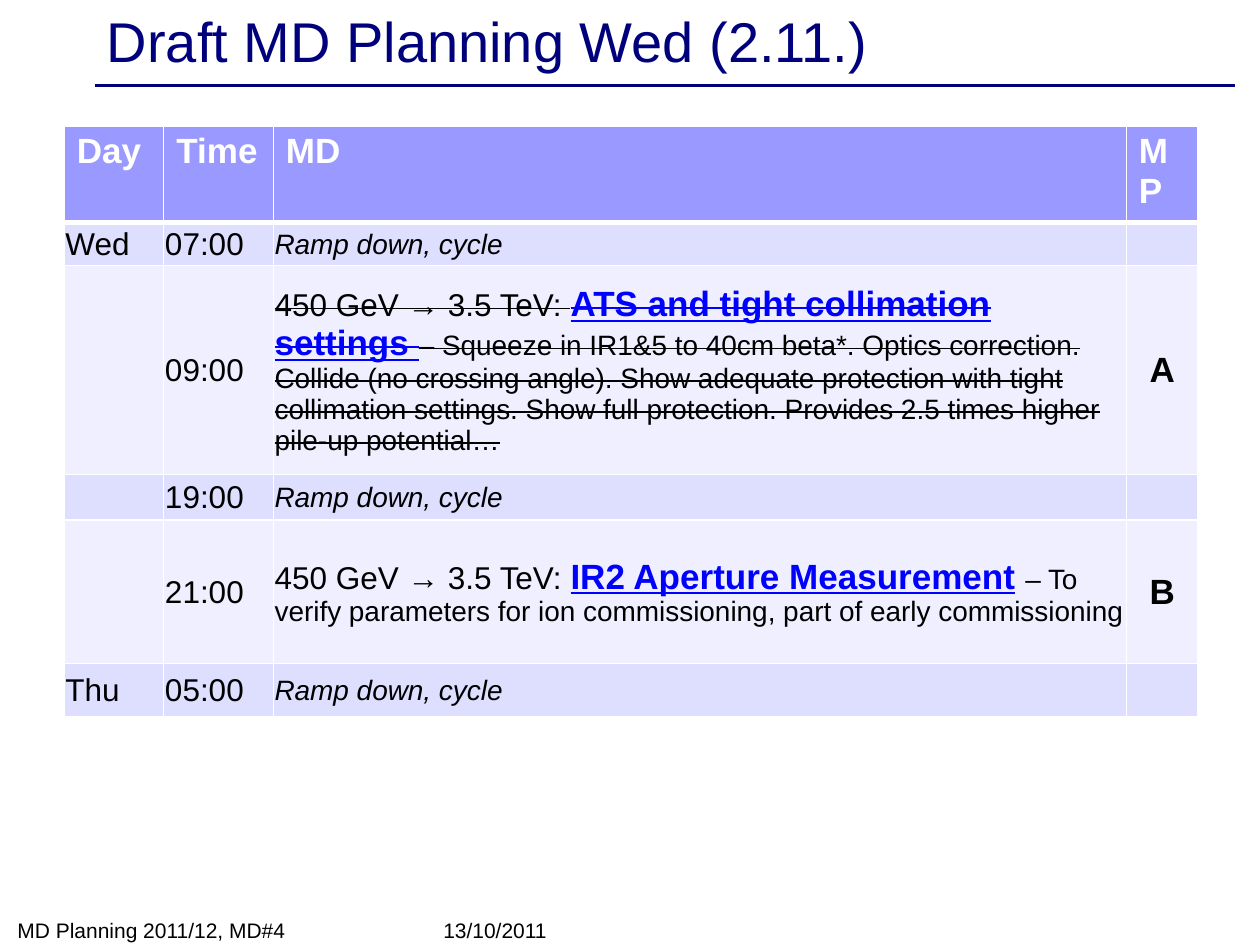
import pptx
import pptx.dml.color
import pptx.enum.shapes
import pptx.enum.text
import pptx.oxml
import pptx.oxml.ns
import pptx.util
from pptx.util import Inches

ALIGN = pptx.enum.text.PP_ALIGN
ANCHOR = pptx.enum.text.MSO_ANCHOR
NAVY, BLACK, WHITE, BLUE = "00007D", "000000", "FFFFFF", "0000FF"
HEADER_FILL, BAND_FILLS = "9999FF", ("DEDEFF", "EFEFFF")


def color(value):
    return pptx.dml.color.RGBColor.from_string(value)


class SlideBuilder:
    font_name = "Arial"

    def __init__(self, slide):
        self.slide = slide

    def add_run(self, paragraph, text, size, fill=BLACK, bold=False,
                italic=False, underline=False, strike=False):
        run = paragraph.add_run()
        run.text = text
        font = run.font
        font.name = self.font_name
        font.size = pptx.util.Pt(size)
        font.bold, font.italic, font.underline = bold, italic, underline
        font.color.rgb = color(fill)
        if strike:
            run._r.get_or_add_rPr().set("strike", "sngStrike")

    def add_text(self, text, left, top, width, height, size, fill, anchor):
        shape = self.slide.shapes.add_textbox(
            Inches(left), Inches(top), Inches(width), Inches(height))
        frame = shape.text_frame
        frame.word_wrap = True
        frame.vertical_anchor = anchor
        self.add_run(frame.paragraphs[0], text, size, fill)

    def add_line(self, left, right, top, fill, width):
        connector = self.slide.shapes.add_connector(
            pptx.enum.shapes.MSO_CONNECTOR.STRAIGHT,
            Inches(left), Inches(top), Inches(right), Inches(top))
        connector.line.color.rgb = color(fill)
        connector.line.width = pptx.util.Pt(width)
        connector._element.spPr.append(pptx.oxml.parse_xml(
            f"<a:effectLst {pptx.oxml.ns.nsdecls('a')}/>"))

    def add_borders(self, cell, top, bottom):
        properties = cell._tc.get_or_add_tcPr()
        widths = {"lnL": 1, "lnR": 1, "lnT": top, "lnB": bottom}
        for index, (side, width) in enumerate(widths.items()):
            properties.insert(index, pptx.oxml.parse_xml(
                f"<a:{side} {pptx.oxml.ns.nsdecls('a')} w=\"{pptx.util.Pt(width)}\">"
                f"<a:solidFill><a:srgbClr val=\"{WHITE}\"/></a:solidFill></a:{side}>"))

    def fill_cell(self, cell, runs, row, column):
        cell.fill.solid()
        cell.fill.fore_color.rgb = color(BAND_FILLS[(row - 1) % 2] if row else HEADER_FILL)
        self.add_borders(cell, 3 if row == 1 else 1, 1 if row else 3)
        if row:
            cell.vertical_anchor = ANCHOR.MIDDLE
            cell.margin_left = cell.margin_right = cell.margin_top = Inches(0.01)
            cell.margin_bottom = 0
        paragraph = cell.text_frame.paragraphs[0]
        paragraph.alignment = ALIGN.CENTER if row and column == 3 else ALIGN.LEFT
        for text, style in runs:
            self.add_run(paragraph, text, **style)

    def add_table(self, left, top, widths, heights, rows):
        table = self.slide.shapes.add_table(
            len(rows), len(widths), Inches(left), Inches(top),
            Inches(sum(widths)), Inches(sum(heights))).table
        for column, width in zip(table.columns, widths):
            column.width = Inches(width)
        for row, height in zip(table.rows, heights):
            row.height = Inches(height)
        for row, cells in enumerate(rows):
            for column, runs in enumerate(cells):
                self.fill_cell(table.cell(row, column), runs, row, column)


def main():
    presentation = pptx.Presentation()
    presentation.slide_width = Inches(10)
    presentation.slide_height = Inches(7.5)
    builder = SlideBuilder(presentation.slides.add_slide(presentation.slide_layouts[6]))

    header = dict(size=20, fill=WHITE, bold=True)
    body = dict(size=18)
    detail = dict(size=16)
    link = dict(size=20, fill=BLUE, bold=True, underline=True)
    letter = dict(size=20, bold=True)
    struck = dict(strike=True)
    beam = "450 GeV → 3.5 TeV: "
    ramp_down = [("Ramp down, cycle", dict(size=16, italic=True))]
    collimation = [
        (beam, body | struck),
        ("ATS and tight collimation settings ", link | struck),
        ("– Squeeze in IR1&5 to 40cm beta*. Optics correction. Collide (no crossing "
         "angle). Show adequate protection with tight collimation settings. Show full "
         "protection. Provides 2.5 times higher pile-up potential…", detail | struck),
    ]
    aperture = [
        (beam, body),
        ("IR2 Aperture Measurement", link),
        (" ", dict(size=20)),
        ("– To verify parameters for ion commissioning, part of early commissioning", detail),
    ]
    schedule = [
        ("Wed", "07:00", ramp_down, ""),
        ("", "09:00", collimation, "A"),
        ("", "19:00", ramp_down, ""),
        ("", "21:00", aperture, "B"),
        ("Thu", "05:00", ramp_down, ""),
    ]
    rows = [[[(title, header)] for title in ("Day", "Time", "MD", "MP")]]
    for day, time, activity, protection in schedule:
        rows.append([[(day, body)], [(time, body)], activity, [(protection, letter)]])

    builder.add_line(0.75, 9.8, 0.68, NAVY, 2)
    builder.add_text("Draft MD Planning Wed (2.11.)", 0.75, 0.03, 9, 0.57, 32, NAVY, ANCHOR.MIDDLE)
    builder.add_table(0.51, 1, (0.79, 0.87, 6.77, 0.57),
                      (0.41, 0.34, 1.66, 0.36, 1.14, 0.42), rows)
    builder.add_text("MD Planning 2011/12, MD#4", 0.04, 7.24, 2.33, 0.29, 12, BLACK, ANCHOR.BOTTOM)
    builder.add_text("13/10/2011", 3.42, 7.25, 3.17, 0.28, 12, BLACK, ANCHOR.BOTTOM)
    presentation.save("out.pptx")


if __name__ == "__main__":
    main()
